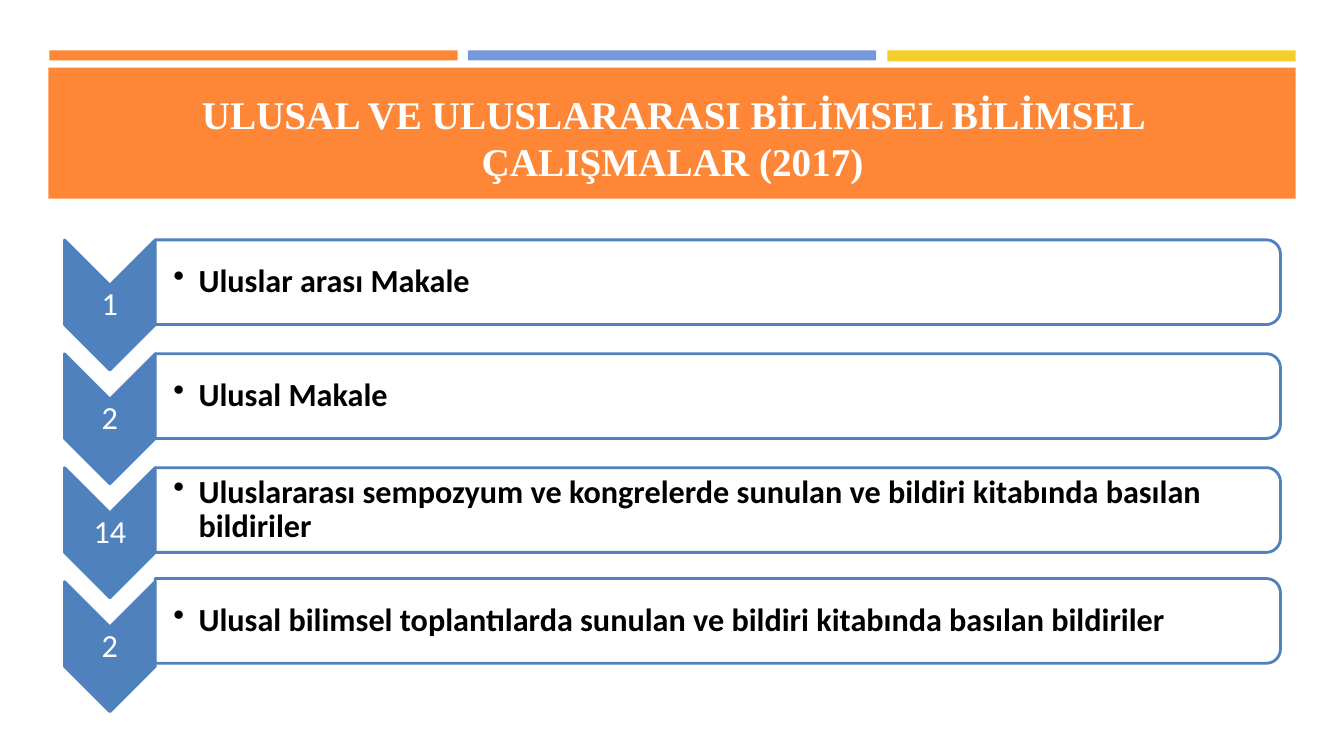
"""Build the slide that counts national and international scientific works of 2017."""
from dataclasses import dataclass
from math import cos, pi, sin

from lxml.etree import SubElement
from pptx import Presentation
from pptx.dml.color import RGBColor
from pptx.enum.shapes import MSO_SHAPE as Preset
from pptx.enum.text import MSO_ANCHOR as Anchor, PP_ALIGN as Align
from pptx.oxml.ns import qn
from pptx.util import Inches, Pt


@dataclass(frozen=True)
class Theme:
    orange: str = "FE8637"
    periwinkle: str = "7598D9"
    yellow: str = "F5CD2D"
    blue: str = "4F81BD"
    white: str = "FFFFFF"
    black: str = "000000"
    title_font: str = "Times New Roman"
    body_font: str = "Calibri"
    title_size: int = 28
    body_size: int = 23
    outline: int = 2


theme = Theme()
presentation = Presentation()
presentation.slide_width = Inches(13.33)
presentation.slide_height = Inches(7.5)
slide = presentation.slides.add_slide(presentation.slide_layouts[6])


def draw_outline(points, fill):
    """Draw a closed blue-edged outline through points given in inches."""
    corners = [(Inches(x), Inches(y)) for x, y in points]
    builder = slide.shapes.build_freeform(*corners[0])
    builder.add_line_segments(corners[1:], close=True)
    shape = builder.convert_to_shape()
    shape.shadow.inherit = False
    shape.fill.solid()
    shape.fill.fore_color.rgb = RGBColor.from_string(fill)
    shape.line.color.rgb = RGBColor.from_string(theme.blue)
    shape.line.width = Pt(theme.outline)
    return shape


def write_text(shape, text, color, insets, frame_format, paragraph_format, font_format):
    """Fill a shape with one formatted paragraph."""
    frame = shape.text_frame
    sides = ("margin_left", "margin_top", "margin_right", "margin_bottom")
    margins = {side: Inches(inset) for side, inset in zip(sides, insets)}
    paragraph = frame.paragraphs[0]
    paragraph.text = text
    for target, values in (
        (frame, {"word_wrap": True, **margins, **frame_format}),
        (paragraph, paragraph_format),
        (paragraph.runs[0].font, font_format),
    ):
        for name, value in values.items():
            setattr(target, name, value)
    paragraph.runs[0].font.color.rgb = RGBColor.from_string(color)
    return paragraph


bands = [
    (0.49, 0.5, 4.05, 0.1, theme.orange),
    (4.64, 0.5, 4.05, 0.1, theme.periwinkle),
    (8.8, 0.5, 4.05, 0.11, theme.yellow),
    (0.48, 0.67, 12.37, 1.3, theme.orange),
]
for *bounds, color in bands:
    band = slide.shapes.add_shape(Preset.RECTANGLE, *map(Inches, bounds))
    band.shadow.inherit = False
    band.fill.solid()
    band.fill.fore_color.rgb = RGBColor.from_string(color)
    band.line.fill.background()

title = slide.shapes.add_textbox(*map(Inches, (0.64, 0.77, 12.06, 1.11)))
write_text(
    title, "ULUSAL VE ULUSLARARASI BİLİMSEL BİLİMSEL ÇALIŞMALAR (2017)", theme.white,
    (0.1, 0.05, 0.1, 0.05), {"vertical_anchor": Anchor.BOTTOM}, {"alignment": Align.CENTER},
    {"name": theme.title_font, "size": Pt(theme.title_size), "bold": True},
)

left, middle, split, right = 0.64, 1.09, 1.54, 12.7
first_top, pitch = 2.38, 1.13
row_height, point_depth, radius, arc_steps = 0.84, 0.45, 0.14, 8
centered = {"vertical_anchor": Anchor.MIDDLE}
body_font = {"name": theme.body_font, "size": Pt(theme.body_size)}
works = [
    ("1", "Uluslar arası Makale", 0),
    ("2", "Ulusal Makale", 0),
    ("14", "Uluslararası sempozyum ve kongrelerde sunulan ve bildiri kitabında basılan bildiriler", 0),
    ("2", "Ulusal bilimsel toplantılarda sunulan ve bildiri kitabında basılan bildiriler", -0.03),
]
for row, (count, description, bar_shift) in enumerate(works):
    top = first_top + row * pitch
    bottom = top + row_height
    chevron = draw_outline([
        (split, top), (split, bottom), (middle, bottom + point_depth),
        (left, bottom), (left, top), (middle, top + point_depth),
    ], theme.blue)
    write_text(
        chevron, count, theme.white, (0.02, 0.47, 0.02, 0.47), centered,
        {"alignment": Align.CENTER, "line_spacing": 0.9, "space_after": Pt(10)}, body_font,
    )

    bar_top, bar_bottom = top + bar_shift, bottom + bar_shift
    angles = [pi / 2 * step / arc_steps for step in range(arc_steps + 1)]
    upper_arc = [(right - radius + radius * sin(angle), bar_top + radius - radius * cos(angle))
                 for angle in angles]
    lower_arc = [(x, bar_top + bar_bottom - y) for x, y in reversed(upper_arc)]
    bar = draw_outline(
        [(split, bar_top), *upper_arc, *lower_arc, (split, bar_bottom)], theme.white)
    fill_color = bar.fill._xPr.find(qn("a:solidFill"))[0]
    SubElement(fill_color, qn("a:alpha"), val="90000")
    paragraph = write_text(
        bar, description, theme.black, (0.18, 0.06, 0.06, 0.06), centered,
        {"alignment": Align.LEFT, "level": 1, "line_spacing": 0.9, "space_after": Pt(4)},
        {**body_font, "bold": True},
    )
    properties = paragraph._p.get_or_add_pPr()
    properties.set("marL", str(Inches(0.25)))
    properties.set("indent", str(Inches(-0.25)))
    SubElement(properties, qn("a:buChar"), char="•")

presentation.save("out.pptx")
